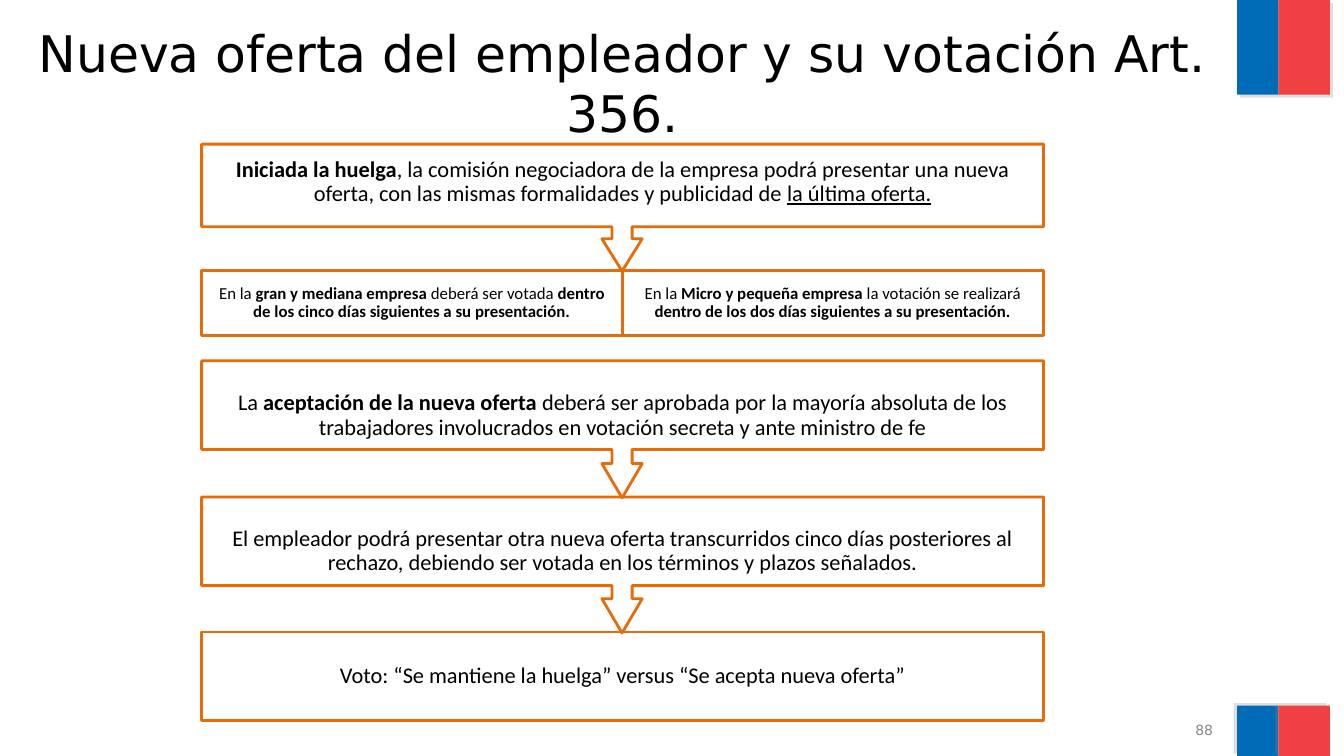
from lxml import etree
from pptx import Presentation
from pptx.dml.color import RGBColor
from pptx.enum.shapes import MSO_SHAPE
from pptx.enum.text import MSO_ANCHOR, PP_ALIGN
from pptx.oxml.ns import qn
from pptx.util import Emu, Pt

RECT = MSO_SHAPE.RECTANGLE
TOP, MIDDLE = MSO_ANCHOR.TOP, MSO_ANCHOR.MIDDLE
CENTER, RIGHT = PP_ALIGN.CENTER, PP_ALIGN.RIGHT

PX = 9144  # 100 px per inch
BLUE, RED, ORANGE = "006CB7", "EF4144", "E46C0A"
BLACK, WHITE, GRAY = "000000", "FFFFFF", "898989"
HEADING_FONT, BODY_FONT = "DejaVu Sans", "Calibri"
BOX_LEFT, BOX_RIGHT = 200, 1035
BOX_MID = 617
NECK_HALF, HEAD_HALF = 10, 20


def px(n):
    return Emu(n * PX)


def color(hex_code):
    return RGBColor.from_string(hex_code)


def write(sp, runs, size=16, font=BODY_FONT, hex_code=BLACK, align=CENTER,
          anchor=MIDDLE, insets=(10, 5, 10, 5), spacing=1.0):
    """Fill a shape with runs: (text, flags), flags from 'b' and 'u'."""
    tf = sp.text_frame
    tf.word_wrap = True
    tf.vertical_anchor = anchor
    tf.margin_left, tf.margin_top, tf.margin_right, tf.margin_bottom = map(px, insets)
    p = tf.paragraphs[0]
    p.alignment = align
    p.line_spacing = spacing
    for text, flags in runs:
        r = p.add_run()
        r.text = text
        r.font.size = Pt(size)
        r.font.name = font
        r.font.bold = "b" in flags
        r.font.underline = "u" in flags
        r.font.color.rgb = color(hex_code)


def add_label(slide, text, left, top, width, height, **fmt):
    sp = slide.shapes.add_textbox(px(left), px(top), px(width), px(height))
    write(sp, [(text, "")], font=HEADING_FONT, **fmt)


def add_band(slide, left, top, width, height, fill, angle):
    """Flat rectangle with a light shadow cast at the given angle."""
    sp = slide.shapes.add_shape(RECT, px(left), px(top), px(width), px(height))
    sp.fill.solid()
    sp.fill.fore_color.rgb = color(fill)
    sp.line.fill.background()
    sp.shadow.inherit = False
    effects = sp.element.spPr.find(qn("a:effectLst"))
    shadow = etree.SubElement(effects, qn("a:outerShdw"), blurRad="0",
                              dist=str(Pt(3)), dir=str(angle * 60000),
                              algn="ctr", rotWithShape="0")
    clr = etree.SubElement(shadow, qn("a:srgbClr"), val="808080")
    etree.SubElement(clr, qn("a:alpha"), val="25000")


def add_outline(slide, points, runs, **fmt):
    """Closed white polygon with an orange border and text."""
    (x, y), *rest = [(px(a), px(b)) for a, b in points]
    builder = slide.shapes.build_freeform(x, y)
    builder.add_line_segments(rest, close=True)
    sp = builder.convert_to_shape()
    sp.fill.solid()
    sp.fill.fore_color.rgb = color(WHITE)
    sp.line.color.rgb = color(ORANGE)
    sp.line.width = Pt(2)
    sp.shadow.inherit = False
    write(sp, runs, spacing=0.9, **fmt)


def add_box(slide, left, top, right, bottom, runs, **fmt):
    corners = [(left, top), (right, top), (right, bottom), (left, bottom)]
    add_outline(slide, corners, runs, **fmt)


def add_callout(slide, top, bottom, neck, tip, runs, inset_bottom):
    """Full-width box whose lower edge ends in a down arrow."""
    shoulder = bottom + neck
    points = [
        (BOX_RIGHT, bottom), (BOX_MID + NECK_HALF, bottom),
        (BOX_MID + NECK_HALF, shoulder), (BOX_MID + HEAD_HALF, shoulder),
        (BOX_MID, tip),
        (BOX_MID - HEAD_HALF, shoulder), (BOX_MID - NECK_HALF, shoulder),
        (BOX_MID - NECK_HALF, bottom), (BOX_LEFT, bottom),
        (BOX_LEFT, top), (BOX_RIGHT, top),
    ]
    add_outline(slide, points, runs, insets=(19, 19, 19, inset_bottom))


def main():
    prs = Presentation()
    prs.slide_width, prs.slide_height = px(1333), px(750)
    slide = prs.slides.add_slide(prs.slide_layouts[6])

    # Corner colour bands
    for top, height, angle in ((0, 94, 45), (700, 50, 215)):
        add_band(slide, 1227, top, 41, height, BLUE, angle)
        add_band(slide, 1268, top, 51, height, RED, angle)

    # Page number and title
    add_label(slide, "88", 902, 714, 311, 21, size=10, hex_code=GRAY, align=RIGHT)
    add_label(slide, "Nueva oferta del empleador y su votación Art. 356.",
              22, 17, 1191, 125, size=36, anchor=TOP)

    # Last step: the vote
    add_box(slide, BOX_LEFT, 627, BOX_RIGHT, 715,
            [("Voto: “Se mantiene la huelga” versus “Se acepta nueva oferta”", "")],
            insets=(19, 19, 19, 19))

    # Steps with arrows, from the bottom up
    add_callout(slide, 493, 581, 13, 628, [
        ("El empleador podrá presentar otra nueva oferta transcurridos cinco días "
         "posteriores al rechazo, debiendo ser votada en los términos y plazos "
         "señalados.", "")], 46)
    add_callout(slide, 358, 446, 14, 494, [
        ("La ", ""), ("aceptación de la nueva oferta ", "b"),
        ("deberá ser aprobada por la mayoría absoluta de los trabajadores "
         "involucrados en votación secreta y ante ministro de fe", "")], 46)
    add_callout(slide, 143, 225, 12, 269, [
        ("Iniciada la huelga", "b"),
        (", la comisión negociadora de la empresa podrá presentar una nueva "
         "oferta, con las mismas formalidades y publicidad de ", ""),
        ("la última oferta.", "u")], 69)

    # Voting deadlines by company size
    deadlines = (
        (BOX_LEFT, BOX_MID, "gran y mediana empresa ", "deberá ser votada ",
         "dentro de los cinco días siguientes a su presentación."),
        (BOX_MID, BOX_RIGHT, "Micro y pequeña empresa ", "la votación se realizará ",
         "dentro de los dos días siguientes a su presentación."),
    )
    for left, right, company, action, term in deadlines:
        add_box(slide, left, 268, right, 333,
                [("En la ", ""), (company, "b"), (action, ""), (term, "b")],
                size=12, insets=(14, 3, 14, 3))

    prs.save("out.pptx")


if __name__ == "__main__":
    main()
